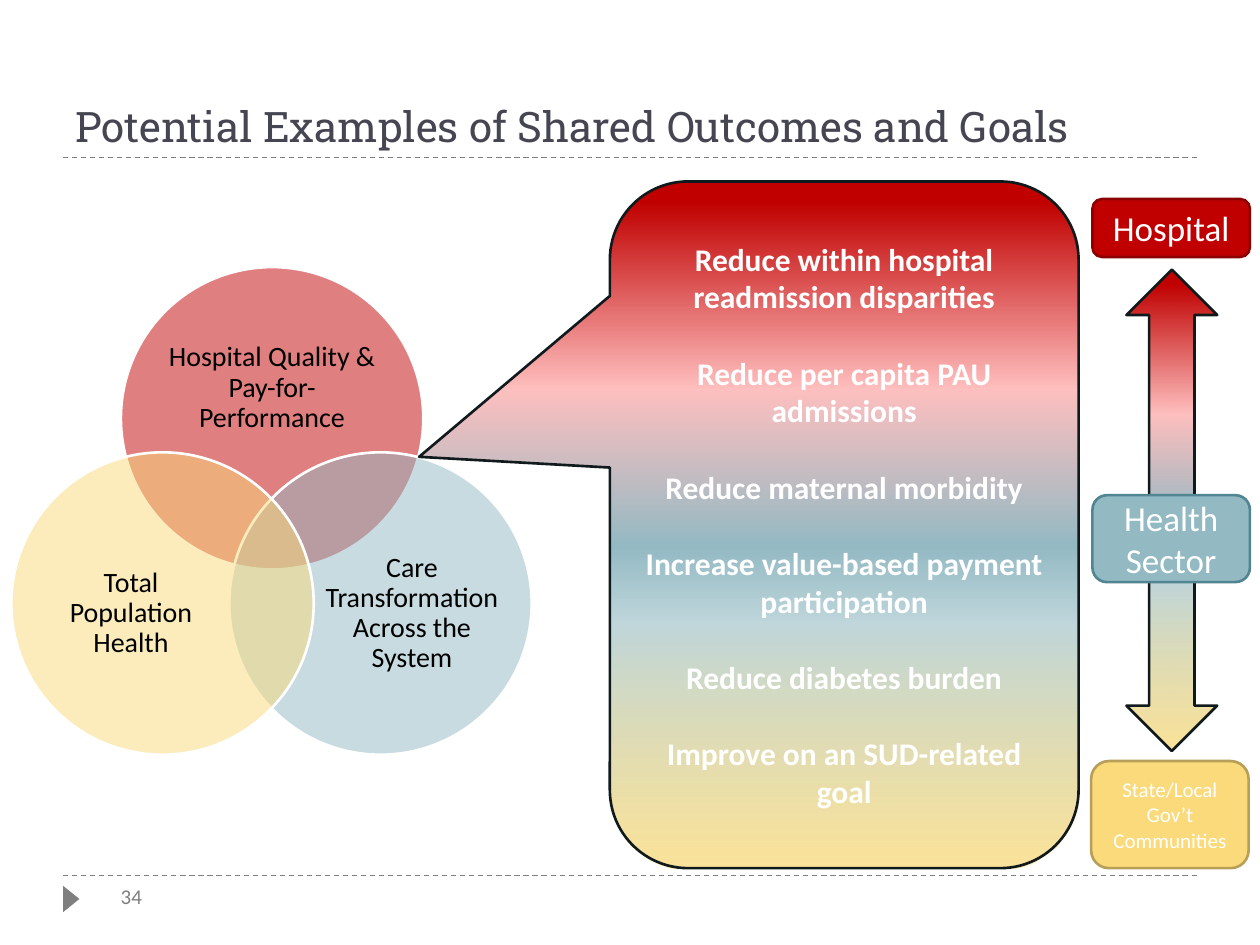
"""Build the slide of shared outcomes and goals on a grid of 100 columns by 75 rows."""
from lxml.etree import SubElement
from pptx import Presentation
from pptx.dml.color import RGBColor
from pptx.enum.dml import MSO_LINE
from pptx.enum.shapes import MSO_CONNECTOR, MSO_SHAPE as SHAPE
from pptx.enum.text import MSO_ANCHOR as ANCHOR, PP_ALIGN as ALIGN
from pptx.oxml.ns import qn
from pptx.util import Inches, Pt

rgb = RGBColor.from_string
prs = Presentation()
prs.slide_width, prs.slide_height = Inches(10), Inches(7.5)
cell = prs.slide_width / 100
s = prs.slides.add_slide(prs.slide_layouts[6])


def write(sp, text, size=16, color="FFFFFF", font="Calibri", bold=False, align=ALIGN.CENTER,
          anchor=ANCHOR.MIDDLE, inset=(1, 0.5), spacing=None, gap=0):
    """Write one paragraph per line of text into a shape."""
    tf = sp.text_frame
    tf.word_wrap, tf.vertical_anchor = True, anchor
    tf.margin_left = tf.margin_right = int(inset[0] * cell)
    tf.margin_top = tf.margin_bottom = int(inset[1] * cell)
    for i, line in enumerate(text.split("\n")):
        p = tf.paragraphs[0] if i == 0 else tf.add_paragraph()
        p.alignment, p.line_spacing = align, spacing
        p.space_before = Pt(gap if i else 0)
        r = p.add_run()
        r.text = line
        r.font.size, r.font.name, r.font.bold = Pt(size), font, bold
        r.font.color.rgb = rgb(color)


def draw(kind, box, fill=None, line=None, alpha=None, stops=()):
    """Draw a text box or preset shape with a solid or vertical gradient fill."""
    box = [int(v * cell) for v in box]
    if kind is None:
        return s.shapes.add_textbox(*box)
    sp = s.shapes.add_shape(kind, *box)
    sp.shadow.inherit = False
    if line:
        sp.line.color.rgb, sp.line.width = rgb(line), Pt(1.5)
    else:
        sp.line.fill.background()
    if fill:
        sp.fill.solid()
        sp.fill.fore_color.rgb = rgb(fill)
        if alpha:
            clr = sp._element.spPr.find(qn("a:solidFill"))[0]
            SubElement(clr, qn("a:alpha"), val=str(alpha * 1000))
    if stops:
        sp.fill.gradient()
        grad = sp._element.spPr.find(qn("a:gradFill"))
        gs_list = grad.find(qn("a:gsLst"))
        for gs in list(gs_list):
            gs_list.remove(gs)
        for pos, color, opacity in stops:
            gs = SubElement(gs_list, qn("a:gs"), pos=str(pos * 1000))
            clr = SubElement(gs, qn("a:srgbClr"), val=color)
            SubElement(clr, qn("a:alpha"), val=str(opacity * 1000))
        grad.find(qn("a:lin")).set("ang", str(270 * 60000))
    return sp


for row in (69.5, 12.5):
    c = s.shapes.add_connector(MSO_CONNECTOR.STRAIGHT, *[int(v * cell) for v in (5, row, 95, row)])
    c.line.color.rgb, c.line.width, c.line.dash_style = rgb("7F7F7F"), Pt(0.75), MSO_LINE.DASH
    SubElement(c._element.spPr, qn("a:effectLst"))

draw(SHAPE.ISOSCELES_TRIANGLE, (4.6, 70.7, 2.1, 1.3), "7F7F7F").rotation = 90
write(draw(None, (8.6, 69.6, 4.1, 3)), "34", size=12, color="7F7F7F", align=ALIGN.LEFT)
write(draw(None, (5, 1.7, 90, 10.8)), "Potential Examples of Shared Outcomes and Goals",
      size=24, color="464653", font="Roboto Slab", align=ALIGN.LEFT, anchor=ANCHOR.BOTTOM)

circles = [
    (9.6, 21.2, "C00000", (12.8, 25.4, 17.6, 10.8), "Hospital Quality & Pay-for-Performance"),
    (18.2, 35.9, "93B9C3", (25.5, 42.1, 14.4, 13.2), "Care Transformation Across the System"),
    (0.9, 35.9, "FADA7A", (3.2, 42.1, 14.4, 13.2), "Total Population Health"),
]
for x, y, color, box, label in circles:
    draw(SHAPE.OVAL, (x, y, 24, 24), color, "FFFFFF", alpha=50)
    write(draw(None, box), label, color="000000", inset=(0, 0), spacing=0.9)

scale = [(0, "FADA7A", 76), (36, "BFD6DB", 100), (47, "93B9C3", 100),
         (70, "FFBFBF", 100), (97, "C00000", 100), (100, "C00000", 100)]
goals = ["Reduce within hospital readmission disparities", "Reduce per capita PAU admissions",
         "Reduce maternal morbidity", "Increase value-based payment participation",
         "Reduce diabetes burden", "Improve on an SUD-related goal"]
callout = draw(SHAPE.ROUNDED_RECTANGULAR_CALLOUT, (48.4, 14.4, 37.2, 54.5), line="101A1D", stops=scale)
for i, value in enumerate((-0.907, -0.099, 0.167)):
    callout.adjustments[i] = value
write(callout, "\n".join(goals), size=18, bold=True, gap=22)

draw(SHAPE.UP_DOWN_ARROW, (89.4, 21.4, 7.2, 38.2), line="101A1D", stops=scale)
levels = [
    (86.7, 15.8, 4.6, "C00000", "8C0000", 20, "Hospital"),
    (86.6, 60.4, 8.5, "FADA7A", "B69F59", 12, "State/Local Gov’t\nCommunities"),
    (86.7, 39.3, 6.9, "93B9C3", "518592", 20, "Health Sector"),
]
for x, y, h, fill, line, size, label in levels:
    write(draw(SHAPE.ROUNDED_RECTANGLE, (x, y, 12.5, h), fill, line), label, size=size)

prs.save("out.pptx")
